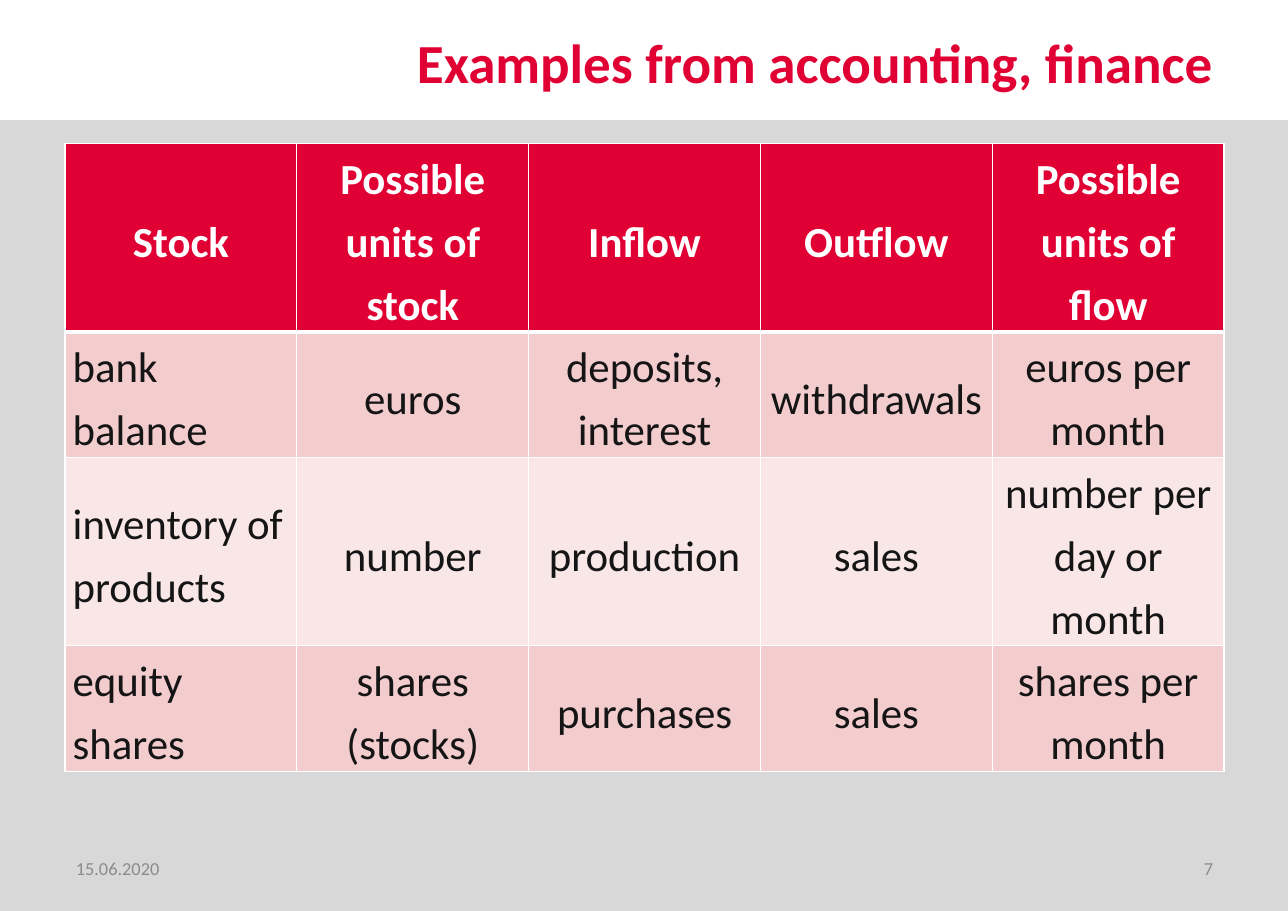
"""Build a slide with a table of stock and flow examples from accounting and finance."""
from lxml.etree import SubElement
from pptx import Presentation
from pptx.dml.color import RGBColor
from pptx.enum.shapes import MSO_SHAPE
from pptx.enum.text import MSO_ANCHOR, PP_ALIGN
from pptx.oxml.ns import qn
from pptx.util import Inches, Pt

TITLE = "Examples from accounting, finance"
ROWS = [
    ("Stock", "Possible units of stock", "Inflow", "Outflow", "Possible units of flow"),
    ("bank balance", "euros", "deposits, interest", "withdrawals", "euros per month"),
    ("inventory of products", "number", "production", "sales", "number per day or month"),
    ("equity shares", "shares (stocks)", "purchases", "sales", "shares per month"),
]
ROW_HEIGHTS = [1.71, 1.14, 1.71, 1.14]
FOOTERS = [("15.06.2020", 0.59, PP_ALIGN.LEFT), ("7", 8.38, PP_ALIGN.RIGHT)]
COLORS = {
    "red": "E00034", "white": "FFFFFF", "panel": "D8D8D8", "ink": "151515",
    "dark band": "F3CCCE", "light band": "F9E7E8", "footer": "8C8C8C",
}
FONT = "Calibri"
WIDTH, HEIGHT = 11.69, 8.27
PANEL_TOP = 1.09
TABLE_WIDTH = 10.52


def color(name):
    return RGBColor.from_string(COLORS[name])


def write(frame, text, size, color_name, align, bold=False):
    frame.word_wrap = True
    frame.vertical_anchor = MSO_ANCHOR.MIDDLE
    para = frame.paragraphs[0]
    para.alignment = align
    span = para.add_run()
    span.text = text
    span.font.name = FONT
    span.font.size = Pt(size)
    span.font.bold = bold
    span.font.color.rgb = color(color_name)
    return para


def add_border(cell, side, points):
    properties = cell._tc.get_or_add_tcPr()
    line = SubElement(properties, qn(f"a:ln{side}"), w=str(Pt(points)))
    fill = SubElement(line, qn("a:solidFill"))
    SubElement(fill, qn("a:srgbClr"), val=COLORS["white"])


def fill_cell(cell, text, row, column):
    header = row == 0
    cell.margin_left = cell.margin_right = Inches(0.07)
    cell.margin_top = cell.margin_bottom = 0
    cell.vertical_anchor = MSO_ANCHOR.MIDDLE
    align = PP_ALIGN.CENTER if header or column else PP_ALIGN.LEFT
    para = write(cell.text_frame, text, 28, "white" if header else "ink", align, header)
    para.line_spacing = 1.2
    para.space_after = Pt(6)
    for side in "LRTB":
        under_header = (row, side) in [(0, "B"), (1, "T")]
        add_border(cell, side, 3 if under_header else 1)
    cell.fill.solid()
    band = "dark band" if row % 2 else "light band"
    cell.fill.fore_color.rgb = color("red" if header else band)


def add_panel(page):
    panel = page.shapes.add_shape(
        MSO_SHAPE.RECTANGLE, 0, Inches(PANEL_TOP), Inches(WIDTH), Inches(HEIGHT - PANEL_TOP))
    panel.shadow.inherit = False
    panel.fill.solid()
    panel.fill.fore_color.rgb = color("panel")
    panel.line.fill.background()


def add_examples(page):
    table = page.shapes.add_table(
        len(ROWS), len(ROWS[0]), Inches(0.59), Inches(1.3),
        Inches(TABLE_WIDTH), Inches(sum(ROW_HEIGHTS))).table
    for row, (texts, height) in enumerate(zip(ROWS, ROW_HEIGHTS)):
        table.rows[row].height = Inches(height)
        for column, text in enumerate(texts):
            fill_cell(table.cell(row, column), text, row, column)


def main():
    deck = Presentation()
    deck.slide_width, deck.slide_height = Inches(WIDTH), Inches(HEIGHT)
    page = deck.slides.add_slide(deck.slide_layouts[5])
    title = page.shapes.title
    title.left, title.top = Inches(2.99), Inches(0.2)
    title.width, title.height = Inches(8.12), Inches(0.72)
    write(title.text_frame, TITLE, 36, "red", PP_ALIGN.RIGHT, True)
    add_panel(page)
    add_examples(page)
    for text, left, align in FOOTERS:
        box = page.shapes.add_textbox(Inches(left), Inches(7.66), Inches(2.73), Inches(0.44))
        write(box.text_frame, text, 12, "footer", align)
    deck.save("out.pptx")


if __name__ == "__main__":
    main()
